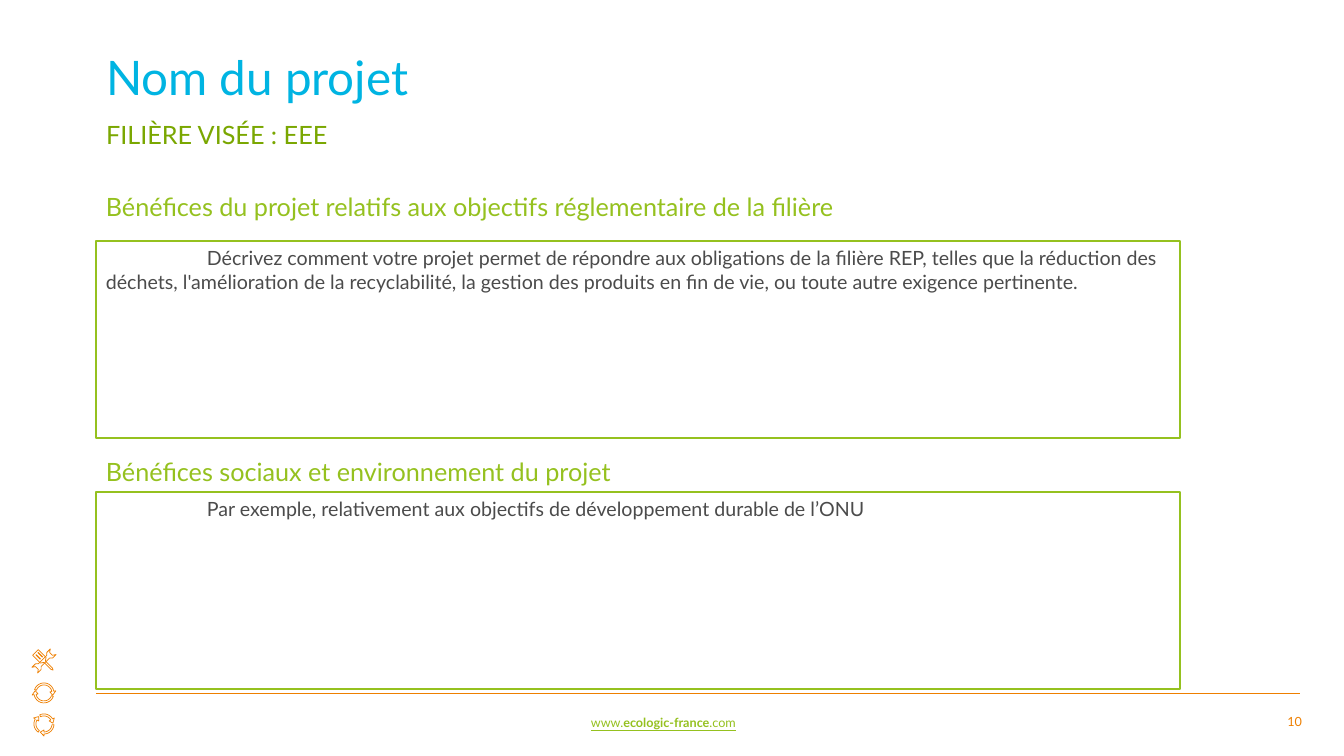
"""Builds the project-benefits slide with two framed answer areas."""
import math
from dataclasses import dataclass

from lxml import etree
from pptx import Presentation
from pptx import util as u
from pptx.dml.color import RGBColor
from pptx.enum import shapes, text
from pptx.oxml.ns import qn

PROJECT = "Nom du projet"
SECTOR = "FILIÈRE VISÉE : EEE"
SECTIONS = [
    {
        "heading": "Bénéfices du projet relatifs aux objectifs réglementaire de la filière",
        "heading_top": 186,
        "answer": "Décrivez comment votre projet permet de répondre aux obligations de la filière REP, "
                  "telles que la réduction des déchets, l'amélioration de la recyclabilité, la gestion "
                  "des produits en fin de vie, ou toute autre exigence pertinente.",
        "answer_top": 241,
    },
    {
        "heading": "Bénéfices sociaux et environnement du projet",
        "heading_top": 451,
        "answer": "Par exemple, relativement aux objectifs de développement durable de l’ONU",
        "answer_top": 492,
    },
]
WEBSITE = [("www.", False), ("ecologic-france", True), (".com", False)]
PAGE = "10"

WRENCH_HALF = [(6, 2), (8, 4), (13, 4), (10, 2), (10, -2), (13, -4), (8, -4), (6, -2)]
WRENCH = WRENCH_HALF + [(-x, -y) for x, y in WRENCH_HALF]
SCREWDRIVER = [(-12, -4), (-1, -4), (1, -1), (11, -1), (13, 0), (11, 1), (1, 1), (-1, 4), (-12, 4)]
GRIPS = [[(-10, y), (-4, y), (-4, y + 0.5), (-10, y + 0.5)] for y in (-2, 1)]
TOOLS = [[(WRENCH, -45), (SCREWDRIVER, 45)]] + [[(grip, 45)] for grip in GRIPS]
TOOLS_CENTRE = (44, 661)
TWO_ARROWS_CENTRE, THREE_ARROWS_CENTRE = (44, 693), (44, 724)


@dataclass(frozen=True)
class Theme:
    font: str = "Lato"
    blue: str = "00B4E2"
    dark_green: str = "7AA701"
    green: str = "95C11F"
    orange: str = "EE7F00"
    grey: str = "4B4B4B"
    white: str = "FFFFFF"
    title: int = 34
    heading: int = 18
    answer: int = 14
    footer: int = 9


THEME = Theme()
PX = 914400 / 100.8
LEFT, WIDE, HEADING_H = 96, 1151, 40
ANSWER_W, ANSWER_H = 1084, 197
INDENT = 101


def px(*lengths):
    return [u.Emu(round(length * PX)) for length in lengths]


def rgb(colour):
    return RGBColor.from_string(colour)


def write(shape, words, size, colour, align=text.PP_ALIGN.LEFT, anchor=text.MSO_ANCHOR.TOP,
          indent=0, spacing=None, underline=None):
    """Fill a shape with one paragraph of (words, bold) runs or a plain string."""
    frame = shape.text_frame
    frame.word_wrap = True
    frame.auto_size = text.MSO_AUTO_SIZE.NONE
    frame.vertical_anchor = anchor
    paragraph = frame.paragraphs[0]
    properties = paragraph._p.get_or_add_pPr()
    properties.set("marL", "0")
    properties.set("indent", str(px(indent)[0]))
    etree.SubElement(properties, qn("a:buNone"))
    paragraph.alignment = align
    paragraph.space_before = u.Pt(0)
    if spacing:
        paragraph.line_spacing = spacing
    for words_part, bold in [(words, False)] if isinstance(words, str) else words:
        run = paragraph.add_run()
        run.text = words_part
        run.font.name, run.font.size = THEME.font, u.Pt(size)
        run.font.bold, run.font.underline = bold, underline
        run.font.color.rgb = rgb(colour)


def place(shape, *box):
    shape.left, shape.top, shape.width, shape.height = px(*box)
    return shape


def polar(radius, degrees):
    angle = math.radians(degrees)
    return radius * math.cos(angle), radius * math.sin(angle)


def turned(points, degrees):
    cos, sin = polar(1, degrees)
    return [(x * cos - y * sin, x * sin + y * cos) for x, y in points]


def cycle_arrow(start, sweep):
    """Return the outline of a curved arrow around the origin."""
    arc = [start + sweep * step / 12 for step in range(13)]
    head = [polar(12, arc[-1]), polar(9, arc[-1] + 25), polar(6, arc[-1])]
    return [polar(10, a) for a in arc] + head + [polar(8, a) for a in reversed(arc)]


def draw_outline(slide, centre, contours):
    """Draw one freeform holding every contour around the centre."""
    moved = [[((centre[0] + x) * PX, (centre[1] + y) * PX) for x, y in contour] for contour in contours]
    builder = slide.shapes.build_freeform(*moved[0][0], scale=1.0)
    for number, contour in enumerate(moved):
        if number:
            builder.move_to(*contour[0])
        builder.add_line_segments(contour[1:], close=True)
    outline = builder.convert_to_shape()
    outline.shadow.inherit = False
    outline.fill.background()
    outline.line.color.rgb = rgb(THEME.orange)
    outline.line.width = u.Pt(0.5)


def draw_icons(slide):
    for parts in TOOLS:
        draw_outline(slide, TOOLS_CENTRE, [turned(part, angle) for part, angle in parts])
    draw_outline(slide, TWO_ARROWS_CENTRE, [cycle_arrow(start, 150) for start in (20, 200)])
    for start in (5, 125, 245):
        draw_outline(slide, THREE_ARROWS_CENTRE, [cycle_arrow(start, 85)])


def draw_footer(slide):
    website = slide.shapes.add_textbox(*px(581, 710, 528, 25))
    write(website, WEBSITE, THEME.footer, THEME.green, underline=True)
    rule = slide.shapes.add_connector(shapes.MSO_CONNECTOR.STRAIGHT, *px(LEFT, 694, 1300, 694))
    rule.line.color.rgb = rgb(THEME.orange)
    rule.line.width = u.Pt(0.75)
    etree.SubElement(rule._element.spPr, qn("a:effectLst"))
    page = slide.shapes.add_textbox(*px(1247, 709, 65, 26))
    write(page, PAGE, THEME.footer, THEME.orange, align=text.PP_ALIGN.RIGHT)


def draw_section(slide, section):
    heading = slide.shapes.add_textbox(*px(LEFT, section["heading_top"], WIDE, HEADING_H))
    write(heading, section["heading"], THEME.heading, THEME.green)
    answer = slide.shapes.add_shape(shapes.MSO_SHAPE.RECTANGLE,
                                    *px(LEFT, section["answer_top"], ANSWER_W, ANSWER_H))
    answer.shadow.inherit = False
    answer.fill.solid()
    answer.fill.fore_color.rgb = rgb(THEME.white)
    answer.line.color.rgb = rgb(THEME.green)
    answer.line.width = u.Pt(1)
    write(answer, section["answer"], THEME.answer, THEME.grey, indent=INDENT)


def main():
    deck = Presentation()
    deck.slide_width, deck.slide_height = px(1344, 756)
    slide = deck.slides.add_slide(deck.slide_layouts[1])
    title = place(slide.shapes.title, LEFT, 49, WIDE, 62)
    write(title, PROJECT, THEME.title, THEME.blue, anchor=text.MSO_ANCHOR.MIDDLE, spacing=0.9)
    sector = place(slide.placeholders[1], LEFT, 114, WIDE, HEADING_H)
    write(sector, SECTOR, THEME.heading, THEME.dark_green)
    draw_footer(slide)
    draw_icons(slide)
    for section in SECTIONS:
        draw_section(slide, section)
    deck.save("out.pptx")


if __name__ == "__main__":
    main()
